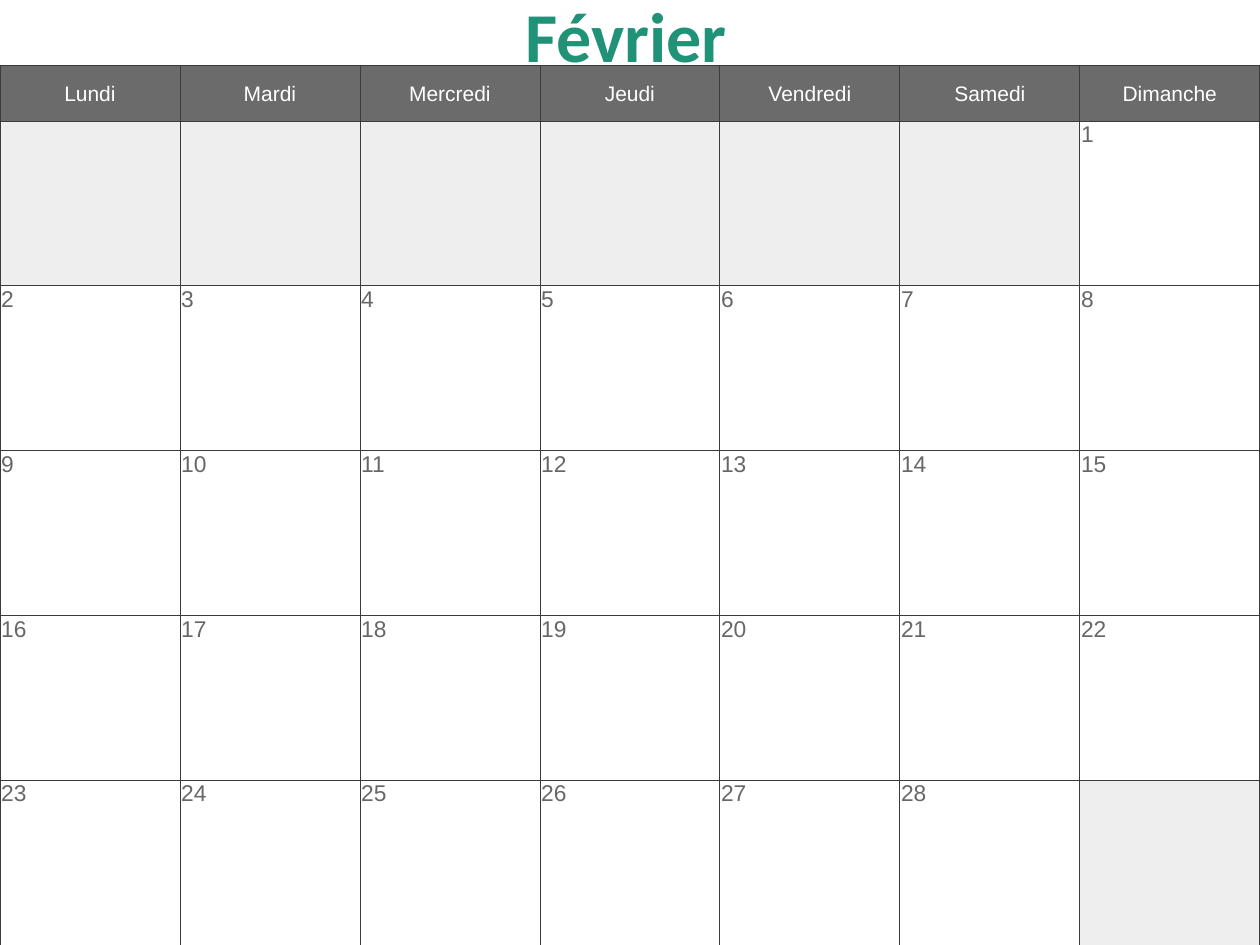
from lxml import etree
from pptx import Presentation, util as u
from pptx.dml.color import RGBColor
from pptx.enum import text
from pptx.oxml.ns import qn

MONTH = "Février"
DAYS = ["Lundi", "Mardi", "Mercredi", "Jeudi", "Vendredi", "Samedi", "Dimanche"]
WEEKS, BLANKS, LAST = 5, 6, 28  # empty cells before day 1, then the last day

WIDE, HIGH = 10, 7.5
TOP, HEAD = 0.52, 0.44
EDGE = "3B3B3B"
INSETS = {"margin_left": 0.01, "margin_right": 0.01, "margin_top": 0.01, "margin_bottom": 0}

TITLE = {"name": "Calibri", "size": 40, "bold": True, "color": "209277"}
NAME = {"name": "Arial", "size": 12, "color": "FFFFFF"}
DATE = {"name": "Arial", "size": 13, "color": "676767"}


def paint(fmt, color):
    """Give a fill or font colour format a hex colour."""
    fmt.rgb = RGBColor.from_string(color)


def write(par, words, style, align):
    par.alignment = align
    run = par.add_run()
    run.text = words
    for key, val in style.items():
        if key == "color":
            paint(run.font.color, val)
        else:
            setattr(run.font, key, u.Pt(val) if key == "size" else val)


def frame(cell):
    """Draw a thin line on all four sides; borders come before the fill."""
    props = cell._tc.get_or_add_tcPr()
    for spot, side in enumerate(("a:lnL", "a:lnR", "a:lnT", "a:lnB")):
        line = etree.Element(qn(side), w=str(u.Pt(0.5)))
        fill = etree.SubElement(line, qn("a:solidFill"))
        etree.SubElement(fill, qn("a:srgbClr"), val=EDGE)
        props.insert(spot, line)


def dress(cell, color):
    cell.fill.solid()
    paint(cell.fill.fore_color, color)
    for key, val in INSETS.items():
        setattr(cell, key, u.Inches(val))
    frame(cell)


def main():
    deck = Presentation()
    deck.slide_width, deck.slide_height = u.Inches(WIDE), u.Inches(HIGH)
    slide = deck.slides.add_slide(deck.slide_layouts[6])

    grid = slide.shapes.add_table(
        WEEKS + 1, len(DAYS), 0, u.Inches(TOP), u.Inches(WIDE), u.Inches(HIGH - TOP)).table
    for col in grid.columns:
        col.width = u.Inches(WIDE / len(DAYS))
    for num, row in enumerate(grid.rows):
        row.height = u.Inches((HIGH - TOP - HEAD) / WEEKS if num else HEAD)

    for col, day in enumerate(DAYS):
        cell = grid.cell(0, col)
        dress(cell, "6B6B6B")
        cell.vertical_anchor = text.MSO_ANCHOR.MIDDLE
        write(cell.text_frame.paragraphs[0], day, NAME, text.PP_ALIGN.CENTER)

    for slot in range(WEEKS * len(DAYS)):
        week, col = divmod(slot, len(DAYS))
        date = slot - BLANKS + 1
        used = 1 <= date <= LAST
        cell = grid.cell(week + 1, col)
        dress(cell, "FFFFFF" if used else "EEEEEE")
        if used:
            write(cell.text_frame.paragraphs[0], str(date), DATE, text.PP_ALIGN.LEFT)

    box = slide.shapes.add_textbox(*map(u.Inches, (4.06, -0.11, 1.82, 0.77)))
    box.text_frame.word_wrap = False
    box.text_frame.auto_size = text.MSO_AUTO_SIZE.SHAPE_TO_FIT_TEXT
    write(box.text_frame.paragraphs[0], MONTH, TITLE, text.PP_ALIGN.CENTER)

    deck.save("out.pptx")


if __name__ == "__main__":
    main()
